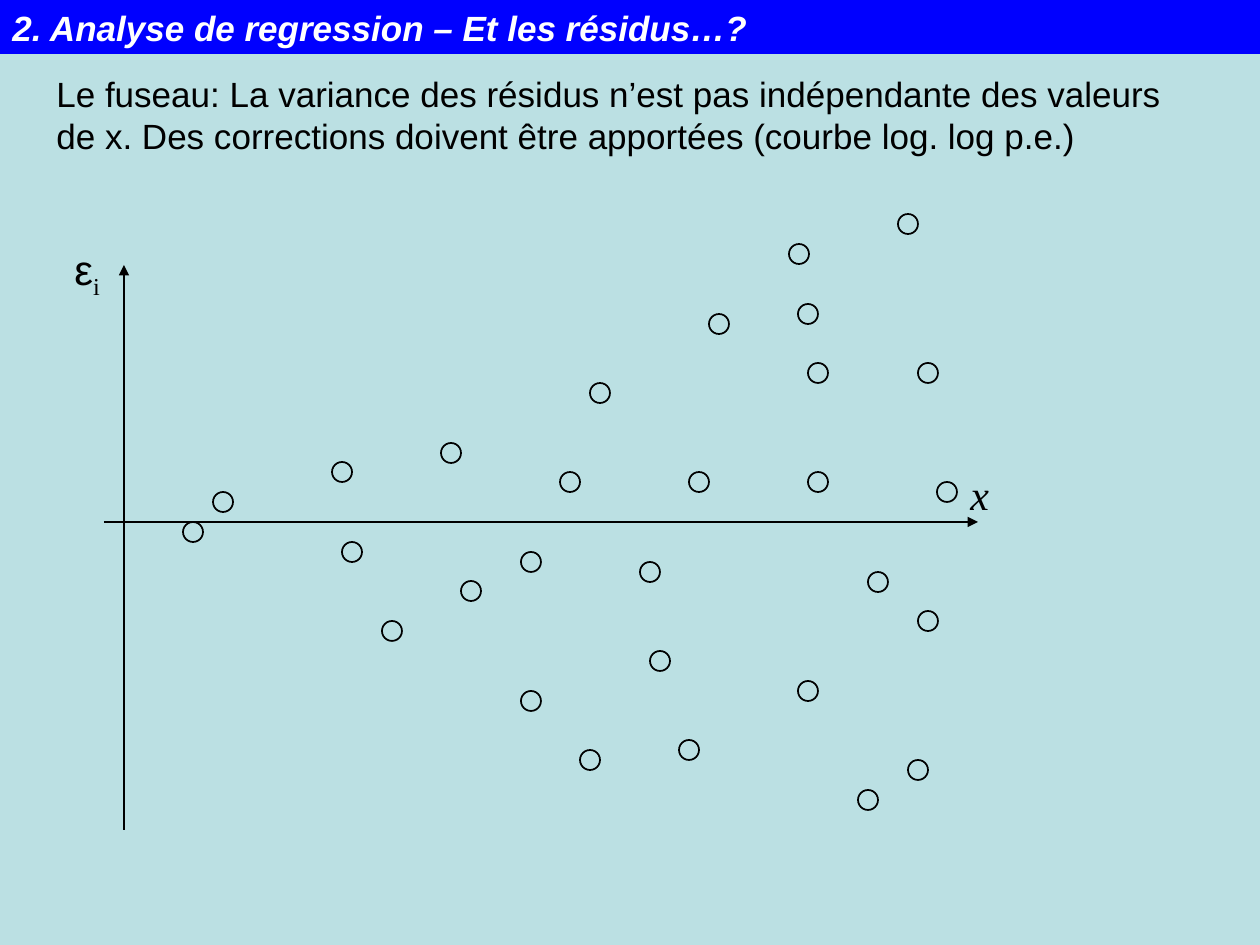
import pptx
import pptx.util
import pptx.dml.color
import pptx.enum.shapes
import pptx.enum.text
import pptx.oxml
import pptx.oxml.ns

RGB = pptx.dml.color.RGBColor
PALE = RGB(0xBB, 0xE0, 0xE3)
BLUE = RGB(0x00, 0x00, 0xFF)
BLACK = RGB(0x00, 0x00, 0x00)
WHITE = RGB(0xFF, 0xFF, 0xFF)

SCALE = 914400 // 126  # EMU in one px
STEP = 9.92            # px in one grid unit of the plot
DOT = 20

# Residuals in grid units: right of and above the origin
DOTS = [
    (7, -1), (10, 2), (23, -3), (22, 5), (27, -11), (33, 7), (35, -7),
    (48, 13), (41, -4), (53, -5), (69, 21), (70, 4), (81, -10), (69, -17),
    (41, -18), (58, 4), (47, -24), (80, -25), (57, -23), (54, -14),
    (76, -6), (45, 4), (60, 20), (79, 30), (81, 15), (75, -28), (83, 3),
    (70, 15), (68, 27),
]


def px(*sizes):
    return [pptx.util.Emu(size * SCALE) for size in sizes]


def style(para, size, color, name="Arial", bold=False, slant=False):
    font = para.font
    font.size = pptx.util.Pt(size)
    font.color.rgb = color
    font.name = name
    font.bold = bold
    font.italic = slant


def add_text(slide, box, wrap=True):
    frame = slide.shapes.add_textbox(*px(*box)).text_frame
    frame.word_wrap = wrap
    return frame.paragraphs[0]


def add_axis(slide, start, end):
    line = slide.shapes.add_connector(
        pptx.enum.shapes.MSO_CONNECTOR.STRAIGHT, *px(*start, *end))
    line.line.color.rgb = BLACK
    line.line.width = pptx.util.Pt(1)
    props = line.line._get_or_add_ln()
    tip = pptx.oxml.parse_xml(
        '<a:tailEnd %s type="triangle"/>' % pptx.oxml.ns.nsdecls("a"))
    props.append(tip)
    props.addnext(pptx.oxml.parse_xml(
        "<a:effectLst %s/>" % pptx.oxml.ns.nsdecls("a")))


def add_dot(slide, x, y):
    dot = slide.shapes.add_shape(
        pptx.enum.shapes.MSO_SHAPE.OVAL,
        *px(x - DOT // 2, y - DOT // 2, DOT, DOT))
    dot.shadow.inherit = False
    dot.fill.solid()
    dot.fill.fore_color.rgb = PALE
    dot.line.color.rgb = BLACK
    dot.line.width = pptx.util.Pt(1)


def add_title(slide, box):
    bar = slide.shapes.add_shape(
        pptx.enum.shapes.MSO_SHAPE.RECTANGLE, *px(*box))
    bar.shadow.inherit = False
    bar.fill.solid()
    bar.fill.fore_color.rgb = BLUE
    bar.line.fill.background()
    frame = bar.text_frame
    frame.word_wrap = True
    frame.vertical_anchor = pptx.enum.text.MSO_ANCHOR.MIDDLE
    para = frame.paragraphs[0]
    para.text = "2. Analyse de regression – Et les résidus…?"
    para.alignment = pptx.enum.text.PP_ALIGN.LEFT
    style(para, 20, WHITE, bold=True, slant=True)


def add_note(slide, box):
    para = add_text(slide, box)
    para.text = ("Le fuseau: La variance des résidus n’est pas indépendante "
                 "des valeurs de x. Des corrections doivent être apportées "
                 "(courbe log. log p.e.)")
    style(para, 20, BLACK)


def add_plot(slide, box):
    left, top, width, height = box
    zero_x, zero_y = left + 62, top + 257

    # Axes
    add_axis(slide, (zero_x, top + height), (zero_x, top))
    add_axis(slide, (zero_x - 20, zero_y), (left + width, zero_y))

    # Residuals
    for col, row in DOTS:
        add_dot(slide, zero_x + round(col * STEP), zero_y - round(row * STEP))

    # Axis names
    para = add_text(slide, (left, top - 28, 52, 63), wrap=False)
    style(para, 24, BLACK)
    para.add_run().text = "ε"
    sub = para.add_run()
    sub.text = "i"
    sub.font.name = "Times New Roman"
    sub.font._element.set("baseline", "-25000")

    para = add_text(slide, (left + width - 20, zero_y - 60, 44, 63), wrap=False)
    para.text = "x"
    style(para, 24, BLACK, "Times New Roman", slant=True)


def main():
    deck = pptx.Presentation()
    deck.slide_width, deck.slide_height = px(1260, 945)
    slide = deck.slides.add_slide(deck.slide_layouts[6])
    slide.background.fill.solid()
    slide.background.fill.fore_color.rgb = PALE
    add_plot(slide, (62, 265, 916, 565))
    add_note(slide, (44, 66, 1159, 97))
    add_title(slide, (0, 0, 1260, 54))
    deck.save("out.pptx")


if __name__ == "__main__":
    main()
